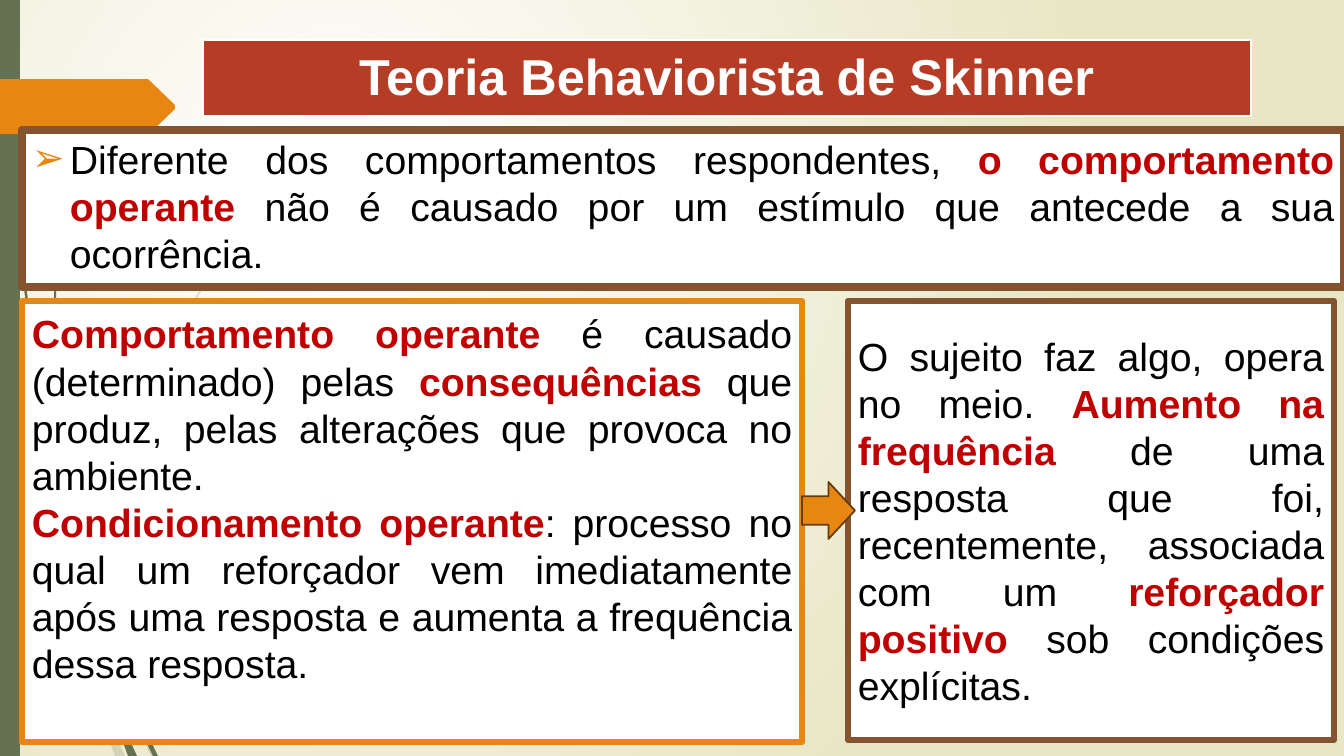
from collections import namedtuple
from lxml import etree
from pptx import Presentation
from pptx.dml.color import RGBColor
from pptx.enum.shapes import MSO_SHAPE as SHAPE
from pptx.enum.text import MSO_ANCHOR as ANCHOR, PP_ALIGN as ALIGN
from pptx.oxml import parse_xml
from pptx.oxml.ns import nsdecls, qn
from pptx.util import Pt

# Content: paragraphs are lists of (text, is_key_term)
TITLE = "Teoria Behaviorista de Skinner"
INTRO = [[("Diferente dos comportamentos respondentes, ", False),
          ("o comportamento operante ", True),
          ("não é causado por um estímulo que antecede a sua ocorrência.", False)]]
CONCEPTS = [
    [("Comportamento operante ", True),
     ("é causado (determinado) pelas ", False),
     ("consequências", True),
     (" que produz, pelas alterações que provoca no ambiente.", False)],
    [("Condicionamento operante", True),
     (": processo no qual um reforçador vem imediatamente após uma resposta "
      "e aumenta a frequência dessa resposta.", False)]]
EFFECT = [[("O sujeito faz algo, opera no meio. ", False),
           ("Aumento na frequência ", True),
           ("de uma resposta que foi, recentemente, associada com um ", False),
           ("reforçador positivo", True),
           (" sob condições explícitas.", False)]]

# Theme
Theme = namedtuple("Theme", "font title body white black key green orange "
                            "rust brown edge cream")
T = Theme("Arial", Pt(36), Pt(28), "FFFFFF", "000000", "C00000", "647252",
          "E78712", "B73C26", "865331", "653B08", "E8E6C4")

# Decorative stems: outlines in px, pale ones first
PALE_STEMS = [
    [(314, 154), (270, 200), (231, 247), (161, 352), (111, 466), (89, 589),
     (88, 601), (86, 590), (108, 465), (159, 351), (230, 246), (270, 199)],
    [(89, 601), (93, 612), (128, 698), (156, 756), (151, 756), (124, 700),
     (89, 615)],
    [(94, 688), (106, 717), (125, 756), (115, 756), (102, 720)]]
DARK_STEMS = [
    [(3, 0), (4, 0), (5, 48), (8, 110), (19, 234), (36, 358), (57, 485),
     (55, 457), (33, 358), (17, 235), (7, 111), (4, 48)],
    [(70, 142), (64, 195), (58, 247), (54, 352), (58, 457), (60, 476),
     (55, 453), (52, 352), (56, 247), (62, 195)],
    [(111, 646), (114, 654), (137, 712), (158, 756), (153, 756), (133, 714),
     (112, 661)],
    [(111, 697), (117, 712), (123, 725), (137, 756), (128, 756), (118, 728)]]
SIDE_TAG = [(0, 79), (148, 79), (175, 105), (175, 109), (148, 135), (0, 134)]

# Layout in px
PX = 914400 / 100.8
WIDTH, HEIGHT = 1344, 756
TITLE_BOX = (203, 40, 1048, 76)
INTRO_BOX = (22, 130, 1322, 157)
CONCEPTS_BOX = (22, 301, 780, 441)
EFFECT_BOX = (848, 301, 486, 439)
ARROW_BOX = (802, 482, 53, 57)
BULLET_INDENT = 38
LINE = 47
INSET = 5


def px(n):
    return round(n * PX)


def color(value):
    return RGBColor.from_string(value)


def paint(sp, fill, line=None, width=0):
    sp.fill.solid()
    sp.fill.fore_color.rgb = color(fill)
    if line:
        sp.line.color.rgb = color(line)
        sp.line.width = Pt(width)
    else:
        sp.line.fill.background()


def add_shape(kind, box, *style):
    sp = s.shapes.add_shape(kind, *map(px, box))
    sp.shadow.inherit = False
    paint(sp, *style)
    return sp


def add_outline(points, fill):
    builder = s.shapes.build_freeform(*points[0], scale=PX)
    builder.add_line_segments(points[1:], close=True)
    sp = builder.convert_to_shape()
    sp.shadow.inherit = False
    paint(sp, fill)
    return sp


def add_text_box(box, paragraphs, line, width, anchor=ANCHOR.MIDDLE):
    sp = add_shape(SHAPE.RECTANGLE, box, T.white, line, width)
    tf = sp.text_frame
    tf.word_wrap = True
    tf.vertical_anchor = anchor
    for i, runs in enumerate(paragraphs):
        p = tf.add_paragraph() if i else tf.paragraphs[0]
        p.alignment = ALIGN.JUSTIFY
        p.font.name, p.font.size = T.font, T.body
        for text, key in runs:
            r = p.add_run()
            r.text = text
            r.font.bold = key
            r.font.color.rgb = color(T.key if key else T.black)
    return tf


def add_bullet(p, char, fill):
    pPr = p._p.get_or_add_pPr()
    pPr.set("marL", str(px(BULLET_INDENT)))
    pPr.set("indent", str(-px(BULLET_INDENT)))
    ns = nsdecls("a")
    parts = (f'<a:buClr {ns}><a:srgbClr val="{fill}"/></a:buClr>',
             f'<a:buFont {ns} typeface="{T.font}"/>',
             f'<a:buChar {ns} char="{char}"/>')
    for at, xml in enumerate(parts):
        pPr.insert(at, parse_xml(xml))


prs = Presentation()
prs.slide_width, prs.slide_height = px(WIDTH), px(HEIGHT)
s = prs.slides.add_slide(prs.slide_layouts[5])

# Background: radial gradient
s.background.fill.solid()
bgPr = s.background._cSld.bg.bgPr
bgPr.replace(bgPr[0], parse_xml(
    f'<a:gradFill {nsdecls("a")} rotWithShape="1"><a:gsLst>'
    f'<a:gs pos="0"><a:srgbClr val="{T.white}"/></a:gs>'
    f'<a:gs pos="100000"><a:srgbClr val="{T.cream}"/></a:gs></a:gsLst>'
    '<a:path path="circle"><a:fillToRect l="50000" t="50000" r="100000" '
    'b="100000"/></a:path></a:gradFill>'))

# Decoration on the left edge
for stem in PALE_STEMS:
    fill = add_outline(stem, T.green).fill._xPr.find(qn("a:solidFill"))
    etree.SubElement(fill[0], qn("a:alpha"), val="20000")
for stem in DARK_STEMS:
    add_outline(stem, T.green)
add_shape(SHAPE.RECTANGLE, (0, 0, 20, HEIGHT), T.green)
add_outline(SIDE_TAG, T.orange)

# Title
title = s.shapes.title
title.left, title.top, title.width, title.height = map(px, TITLE_BOX)
paint(title, T.rust, T.white, 1.75)
tf = title.text_frame
tf.text = TITLE
tf.vertical_anchor = ANCHOR.MIDDLE
tf.margin_bottom = px(2 * INSET)
p = tf.paragraphs[0]
p.alignment = ALIGN.CENTER
p.font.name, p.font.size, p.font.bold = T.font, T.title, True
p.font.color.rgb = color(T.white)

# Text boxes and the arrow between them
intro = add_text_box(INTRO_BOX, INTRO, T.brown, 6, ANCHOR.TOP)
add_bullet(intro.paragraphs[0], "➢", T.orange)
concepts = add_text_box(CONCEPTS_BOX, CONCEPTS, T.orange, 4.5)
concepts.margin_bottom = px(LINE + INSET)
add_text_box(EFFECT_BOX, EFFECT, T.brown, 4.5)
add_shape(SHAPE.RIGHT_ARROW, ARROW_BOX, T.orange, T.edge, 1.25)

prs.save("out.pptx")
